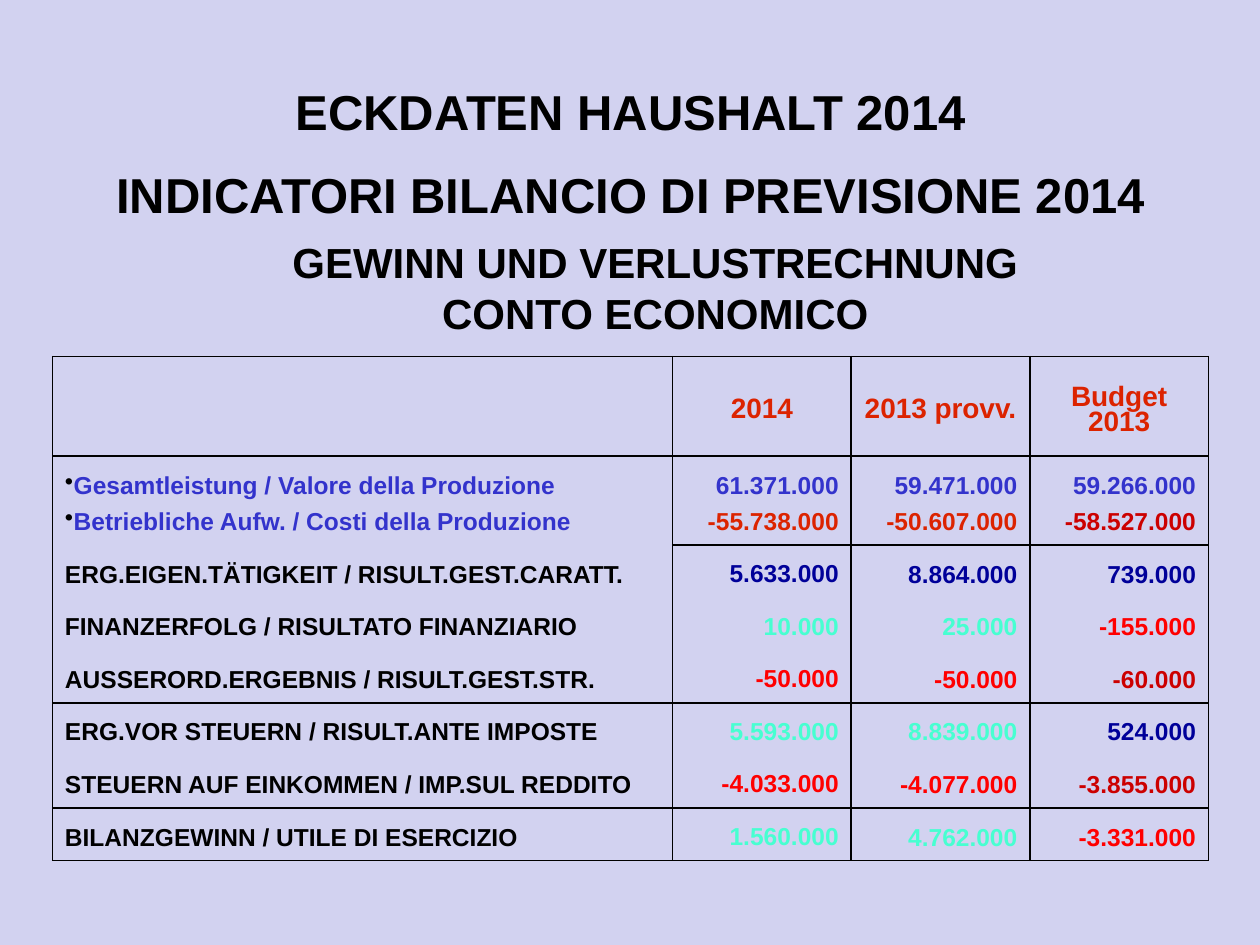
from dataclasses import dataclass

from lxml import etree
from pptx import Presentation
from pptx import util as u
from pptx.dml.color import RGBColor
from pptx.enum import text
from pptx.oxml import ns

COLORS = {
    "background": "D2D2F0", "black": "000000", "orange": "DC2300",
    "blue": "3333CC", "navy": "000099", "mint": "47FFD1",
    "red": "FF0000", "dark red": "CC0000",
}
CENTER, LEFT, RIGHT = text.PP_ALIGN.CENTER, text.PP_ALIGN.LEFT, text.PP_ALIGN.RIGHT


@dataclass
class Entry:
    label: str
    color: str


@dataclass
class BudgetRow:
    cells: list[list[Entry]]  # one list of paragraphs per column
    height: float = 1.06
    line_from: int | None = None  # first column with a line below it
    size: int = 14
    bullets: bool = False


def set_all(target, values: dict) -> None:
    for name, value in values.items():
        setattr(target, name, value)


def write_paragraph(paragraph, entry: Entry, size: float, layout: dict) -> None:
    set_all(paragraph, layout)
    run = paragraph.add_run()
    run.text = entry.label
    set_all(run.font, {"name": "Arial", "size": u.Pt(size), "bold": True})
    run.font.color.rgb = RGBColor.from_string(COLORS[entry.color])


def write_lines(frame, entries: list[Entry], size: float, layouts: list[dict]) -> None:
    for index, (entry, layout) in enumerate(zip(entries, layouts)):
        paragraph = frame.add_paragraph() if index else frame.paragraphs[0]
        write_paragraph(paragraph, entry, size, layout)


def add_bullet(paragraph) -> None:
    properties = paragraph._p.get_or_add_pPr()
    properties.set("marL", "0")
    properties.set("indent", "0")
    color = etree.SubElement(properties, ns.qn("a:buClr"))
    etree.SubElement(color, ns.qn("a:srgbClr"), val=COLORS["black"])
    etree.SubElement(properties, ns.qn("a:buChar"), char="•")


def set_borders(cell, visible: dict[str, bool]) -> None:
    properties = cell._tc.get_or_add_tcPr()
    for index, (side, shown) in enumerate(visible.items()):
        line = etree.Element(ns.qn(f"a:ln{side}"), w=str(u.Pt(1)))
        if shown:
            fill = etree.SubElement(line, ns.qn("a:solidFill"))
            etree.SubElement(fill, ns.qn("a:srgbClr"), val=COLORS["black"])
        else:
            etree.SubElement(line, ns.qn("a:noFill"))
        properties.insert(index, line)


def value_row(label: str, *values: tuple[str, str], line_from: int | None = None) -> BudgetRow:
    cells = [[Entry(label, "black")]] + [[Entry(*value)] for value in values]
    return BudgetRow(cells, line_from=line_from)


ROWS = [
    BudgetRow([[], [Entry("2014", "orange")], [Entry("2013 provv.", "orange")],
               [Entry("Budget 2013", "orange")]], height=2.0, line_from=0, size=16),
    BudgetRow([
        [Entry("Gesamtleistung / Valore della Produzione", "blue"),
         Entry("Betriebliche Aufw. / Costi della Produzione", "blue")],
        [Entry("61.371.000", "blue"), Entry("-55.738.000", "orange")],
        [Entry("59.471.000", "blue"), Entry("-50.607.000", "orange")],
        [Entry("59.266.000", "blue"), Entry("-58.527.000", "dark red")],
    ], height=1.8, line_from=1, bullets=True),
    value_row("ERG.EIGEN.TÄTIGKEIT / RISULT.GEST.CARATT.",
              ("5.633.000", "navy"), ("8.864.000", "navy"), ("739.000", "navy")),
    value_row("FINANZERFOLG / RISULTATO FINANZIARIO",
              ("10.000", "mint"), ("25.000", "mint"), ("-155.000", "red")),
    value_row("AUSSERORD.ERGEBNIS / RISULT.GEST.STR.",
              ("-50.000", "red"), ("-50.000", "red"), ("-60.000", "dark red"), line_from=0),
    value_row("ERG.VOR STEUERN / RISULT.ANTE IMPOSTE",
              ("5.593.000", "mint"), ("8.839.000", "mint"), ("524.000", "navy")),
    value_row("STEUERN AUF EINKOMMEN / IMP.SUL REDDITO",
              ("-4.033.000", "red"), ("-4.077.000", "red"), ("-3.855.000", "dark red"),
              line_from=0),
    value_row("BILANZGEWINN / UTILE DI ESERCIZIO",
              ("1.560.000", "mint"), ("4.762.000", "mint"), ("-3.331.000", "red"), line_from=0),
]
COLUMN_WIDTHS = [12.5, 3.6, 3.6, 3.6]


def has_line_below(row: int, column: int) -> bool:
    first = ROWS[row].line_from
    return first is not None and column >= first


def fill_cell(cell, row: int, column: int) -> None:
    budget_row = ROWS[row]
    set_all(cell, {
        "vertical_anchor": text.MSO_ANCHOR.MIDDLE,
        "margin_left": u.Cm(0.25), "margin_right": u.Cm(0.25),
        "margin_top": u.Cm(0.2), "margin_bottom": 0,
    })
    cell.fill.background()
    set_borders(cell, {
        "L": True, "R": True,
        "T": row == 0 or has_line_below(row - 1, column),
        "B": has_line_below(row, column),
    })
    layout = {"alignment": CENTER if row == 0 else RIGHT if column else LEFT,
              "line_spacing": 0.81, "space_before": u.Pt(8)}
    if column == 1 and row > 1:
        layout |= {"line_spacing": 0.75, "space_before": u.Pt(0)}
    entries = budget_row.cells[column]
    write_lines(cell.text_frame, entries, budget_row.size, [layout] * len(entries))
    if budget_row.bullets and column == 0:
        for paragraph in cell.text_frame.paragraphs:
            add_bullet(paragraph)


def add_budget_table(slide) -> None:
    table = slide.shapes.add_table(
        len(ROWS), len(COLUMN_WIDTHS), u.Cm(1.06), u.Cm(7.19),
        u.Cm(sum(COLUMN_WIDTHS)), u.Cm(sum(row.height for row in ROWS))).table
    set_all(table, {"first_row": False, "horz_banding": False})
    for column, width in zip(table.columns, COLUMN_WIDTHS):
        column.width = u.Cm(width)
    for row_index, row in enumerate(ROWS):
        table.rows[row_index].height = u.Cm(row.height)
        for column_index in range(len(COLUMN_WIDTHS)):
            fill_cell(table.cell(row_index, column_index), row_index, column_index)


def main() -> None:
    presentation = Presentation()
    set_all(presentation, {"slide_width": u.Cm(25.4), "slide_height": u.Cm(19.05)})
    slide = presentation.slides.add_slide(presentation.slide_layouts[5])
    slide.background.fill.solid()
    slide.background.fill.fore_color.rgb = RGBColor.from_string(COLORS["background"])

    # Bilingual title
    title = slide.shapes.title
    set_all(title, {"left": u.Cm(1.98), "top": u.Cm(1.52),
                    "width": u.Cm(21.46), "height": u.Cm(3.07)})
    set_all(title.text_frame, {"word_wrap": False, "auto_size": text.MSO_AUTO_SIZE.NONE,
                               "vertical_anchor": text.MSO_ANCHOR.TOP})
    centered = {"alignment": CENTER, "space_before": u.Pt(0)}
    write_lines(title.text_frame,
                [Entry("ECKDATEN HAUSHALT 2014", "black"),
                 Entry("INDICATORI BILANCIO DI PREVISIONE 2014", "black")],
                28, [centered, centered | {"space_before": u.Pt(13.5)}])

    # Subtitle
    subtitle = slide.shapes.add_textbox(u.Cm(1.78), u.Cm(4.65), u.Cm(22.86), u.Cm(2.29))
    subtitle.text_frame.word_wrap = True
    write_lines(subtitle.text_frame,
                [Entry("GEWINN UND VERLUSTRECHNUNG", "black"),
                 Entry("CONTO ECONOMICO", "black")], 24, [centered] * 2)

    # Income statement
    add_budget_table(slide)
    presentation.save("out.pptx")


if __name__ == "__main__":
    main()
